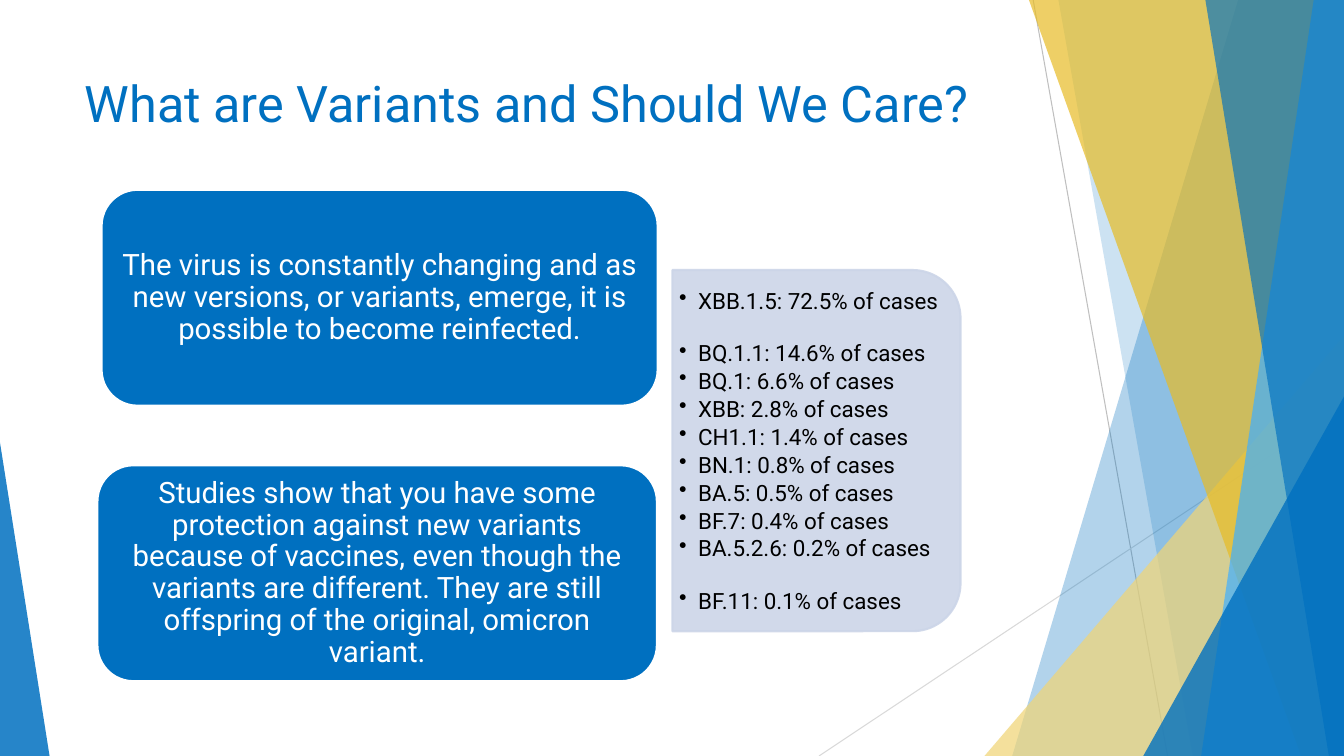
from dataclasses import dataclass

from lxml.etree import SubElement
from pptx import Presentation
from pptx.dml.color import RGBColor
from pptx.enum.shapes import MSO_CONNECTOR, MSO_SHAPE
from pptx.enum.text import MSO_ANCHOR, PP_ALIGN
from pptx.oxml.ns import qn
from pptx.util import Emu, Inches, Pt

# A grid of 160 columns by 90 rows covers the slide
COLUMNS, ROWS = 160, 90
CELL = Inches(1) / 12
FONT = "Roboto"
BLUE, PALE_BLUE, WHITE, BLACK = "0070C0", "CCD5E8", "FFFFFF", "000000"


@dataclass
class Box:
    left: float
    top: float
    width: float
    height: float


@dataclass
class Ray:
    start: tuple[float, float]
    end: tuple[float, float]
    color: str


@dataclass
class Facet:
    """A band from its slanted left side to the right edge of the slide."""
    top_column: float
    bottom_column: float
    color: str
    opacity: int


@dataclass
class Corner:
    """A triangle standing on the bottom edge; apex is a share of its width."""
    left: float
    top: float
    width: float
    apex: float
    color: str
    opacity: int


@dataclass
class Card:
    box: Box
    text: str


RAYS = [
    Ray((123, 0), (139, 90), "BFBFBF"),
    Ray((160, 48.4), (97.5, 90), "D9D9D9"),
]
FACETS_AND_CORNERS = [
    Facet(147.4, 120.5, BLUE, 30),
    Facet(126, 142, BLUE, 20),
    Corner(117.2, 40, 42.8, 1, "F0D577", 72),
    Facet(122.5, 154.9, "E7BC26", 70),
    Facet(156.4, 143, "40AFFF", 70),
    Facet(143.5, 158.2, BLUE, 65),
    Corner(136.1, 47.2, 23.9, 1, BLUE, 80),
    Corner(0, 52.7, 5.9, 0, BLUE, 85),
]
CARDS = [
    Card(Box(12.1, 22.6, 66.2, 25.7),
         "The virus is constantly changing and as new versions, or variants, "
         "emerge, it is possible to become reinfected."),
    Card(Box(11.6, 55.4, 66.6, 25.7),
         "Studies show that you have some protection against new variants "
         "because of vaccines, even though the variants are different. They "
         "are still offspring of the original, omicron variant."),
]
VARIANT_SHARES = {
    "XBB.1.5": 72.5, "BQ.1.1": 14.6, "BQ.1": 6.6, "XBB": 2.8, "CH1.1": 1.4,
    "BN.1": 0.8, "BA.5": 0.5, "BF.7": 0.4, "BA.5.2.6": 0.2, "BF.11": 0.1,
}
VARIANTS_BEFORE_GAP = ("XBB.1.5", "BA.5.2.6")


def cells(count: float) -> Emu:
    return Emu(round(count * CELL))


def frame(box: Box) -> list[Emu]:
    return [cells(length) for length in (box.left, box.top, box.width, box.height)]


def color(hex_string: str) -> RGBColor:
    return RGBColor.from_string(hex_string)


def paint(shape, fill: str, line: str | None = None, opacity: int = 100) -> None:
    shape.shadow.inherit = False
    shape.fill.solid()
    shape.fill.fore_color.rgb = color(fill)
    if line:
        shape.line.color.rgb = color(line)
        shape.line.width = Pt(1.5)
    else:
        shape.line.fill.background()
    if opacity < 100:
        for tint in shape._element.spPr.iter(qn("a:srgbClr")):
            SubElement(tint, qn("a:alpha"), val=str(opacity * 1000))


def write(shape, lines: list[str], *, size: float, ink: str, align=PP_ALIGN.LEFT,
          anchor=MSO_ANCHOR.MIDDLE, insets: tuple[float, float] = (0.1, 0.05),
          line_spacing: float = 0.9, gaps: list[float] | None = None,
          bulleted: bool = False) -> None:
    text_frame = shape.text_frame
    text_frame.word_wrap = True
    text_frame.vertical_anchor = anchor
    text_frame.margin_left = text_frame.margin_right = Inches(insets[0])
    text_frame.margin_top = text_frame.margin_bottom = Inches(insets[1])
    for index, line in enumerate(lines):
        paragraph = text_frame.paragraphs[0] if index == 0 else text_frame.add_paragraph()
        paragraph.alignment = align
        paragraph.line_spacing = line_spacing
        paragraph.space_after = Pt(gaps[index] if gaps else 0)
        run = paragraph.add_run()
        run.text = line
        run.font.name = FONT
        run.font.size = Pt(size)
        run.font.color.rgb = color(ink)
        if bulleted:
            properties = paragraph._p.get_or_add_pPr()
            properties.set("marL", str(Inches(0.19)))
            properties.set("indent", str(-Inches(0.19)))
            SubElement(properties, qn("a:buChar"), char="•")


def draw_ray(slide, ray: Ray) -> None:
    ends = [cells(count) for count in (*ray.start, *ray.end)]
    connector = slide.shapes.add_connector(MSO_CONNECTOR.STRAIGHT, *ends)
    connector.line.color.rgb = color(ray.color)
    connector.line.width = Pt(0.75)
    SubElement(connector._element.spPr, qn("a:effectLst"))


def draw_facet(slide, facet: Facet) -> None:
    builder = slide.shapes.build_freeform(cells(facet.top_column), 0)
    corners = [(COLUMNS, 0), (COLUMNS, ROWS), (facet.bottom_column, ROWS)]
    builder.add_line_segments([(cells(x), cells(y)) for x, y in corners], close=True)
    paint(builder.convert_to_shape(), facet.color, opacity=facet.opacity)


def draw_corner(slide, corner: Corner) -> None:
    box = Box(corner.left, corner.top, corner.width, ROWS - corner.top)
    shape = slide.shapes.add_shape(MSO_SHAPE.ISOSCELES_TRIANGLE, *frame(box))
    shape.adjustments[0] = corner.apex
    paint(shape, corner.color, opacity=corner.opacity)


def draw_variant_list(slide) -> None:
    # The panel is turned so that its rounded side faces right
    panel = slide.shapes.add_shape(MSO_SHAPE.ROUND_2_SAME_RECTANGLE,
                                   *frame(Box(75.7, 36.5, 43, 34.3)))
    panel.rotation = 90
    paint(panel, PALE_BLUE, line=PALE_BLUE, opacity=90)
    text_box = slide.shapes.add_textbox(*frame(Box(80, 34, 32.6, 39.6)))
    write(text_box, [f"{name}: {share}% of cases" for name, share in VARIANT_SHARES.items()],
          size=16, ink=BLACK, insets=(0.07, 0.03), bulleted=True,
          gaps=[20 if name in VARIANTS_BEFORE_GAP else 2.7 for name in VARIANT_SHARES])


def draw_card(slide, card: Card) -> None:
    shape = slide.shapes.add_shape(MSO_SHAPE.ROUNDED_RECTANGLE, *frame(card.box))
    paint(shape, BLUE, line=WHITE)
    write(shape, [card.text], size=21, ink=WHITE, align=PP_ALIGN.CENTER, insets=(0.09, 0.04))


def main() -> None:
    presentation = Presentation()
    presentation.slide_width = cells(COLUMNS)
    presentation.slide_height = cells(ROWS)
    slide = presentation.slides.add_slide(presentation.slide_layouts[6])

    # Background decoration
    for ray in RAYS:
        draw_ray(slide, ray)
    for part in FACETS_AND_CORNERS:
        if isinstance(part, Facet):
            draw_facet(slide, part)
        else:
            draw_corner(slide, part)

    # Title and content
    title = slide.shapes.add_textbox(*frame(Box(8.9, 8, 112.8, 17.3)))
    write(title, ["What are Variants and Should We Care?"], size=36, ink=BLUE,
          anchor=MSO_ANCHOR.TOP, line_spacing=1.0)
    draw_variant_list(slide)
    for card in CARDS:
        draw_card(slide, card)

    presentation.save("out.pptx")


if __name__ == "__main__":
    main()
